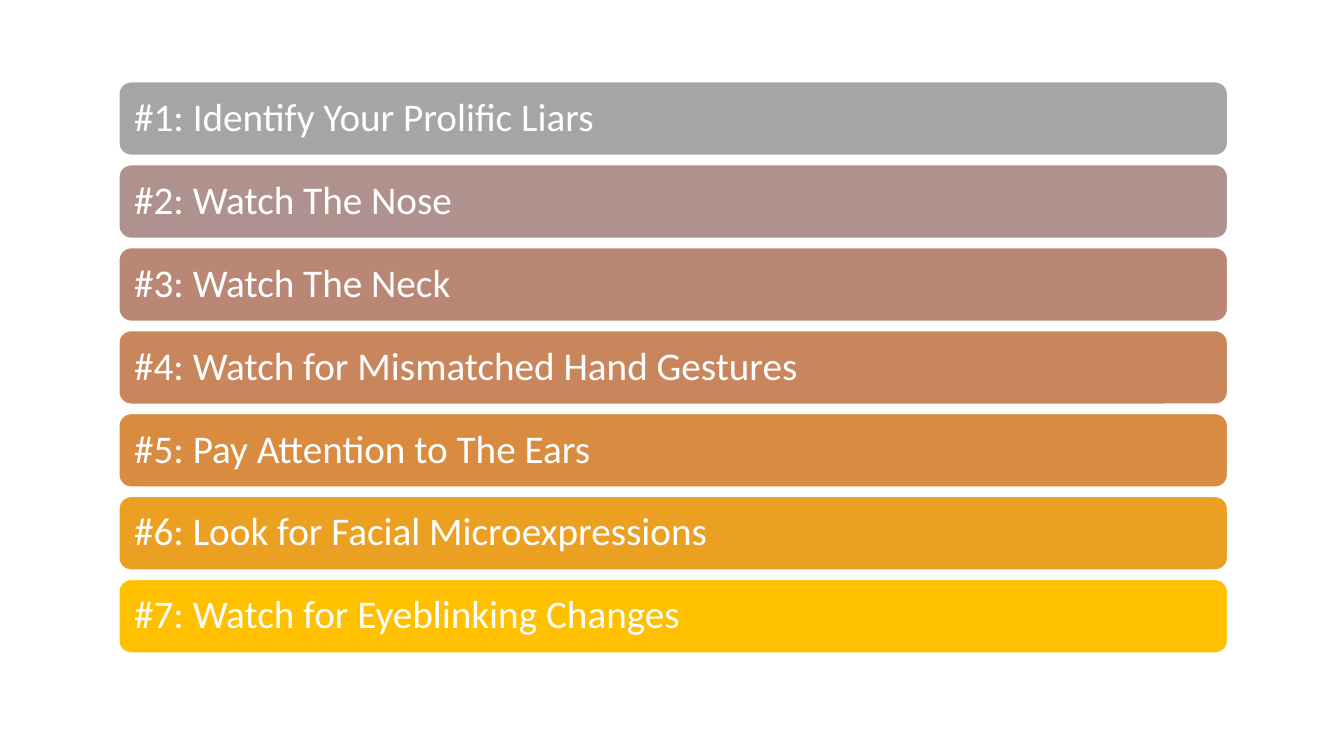
from pptx import Presentation, util as u
from pptx.dml.color import RGBColor
from pptx.enum import shapes, text

Pt = u.Pt
hues = {
    "#1: Identify Your Prolific Liars": "A5A5A5",
    "#2: Watch The Nose": "AF928D",
    "#3: Watch The Neck": "BB8775",
    "#4: Watch for Mismatched Hand Gestures": "C9855C",
    "#5: Pay Attention to The Ears": "D98B3F",
    "#6: Look for Facial Microexpressions": "EBA021",
    "#7: Watch for Eyeblinking Changes": "FFC000",
}
white = RGBColor.from_string("FFFFFF")
left, top, width, height, pitch = 84.9, 58.4, 792, 52.6, 59.25
inset = Pt(8.4)
frame_fmt = {
    "margin_left": inset,
    "margin_right": inset,
    "margin_top": inset,
    "margin_bottom": inset,
    "word_wrap": True,
    "vertical_anchor": text.MSO_ANCHOR.MIDDLE,
}
para_fmt = {"alignment": text.PP_ALIGN.LEFT, "line_spacing": 0.9}
font_fmt = {"name": "Calibri", "size": Pt(28)}

deck = Presentation()
deck.slide_width, deck.slide_height = Pt(960), Pt(540)
slide = deck.slides.add_slide(deck.slide_layouts[6])

for row, (tip, hue) in enumerate(hues.items()):
    bar = slide.shapes.add_shape(
        shapes.MSO_SHAPE.ROUNDED_RECTANGLE,
        Pt(left), Pt(top + row * pitch), Pt(width), Pt(height),
    )
    bar.name = f"Tip {row + 1}"
    bar.shadow.inherit = False
    bar.fill.solid()
    bar.fill.fore_color.rgb = RGBColor.from_string(hue)
    bar.line.color.rgb = white
    bar.line.width = Pt(1)
    frame = bar.text_frame
    frame.text = tip
    para = frame.paragraphs[0]
    font = para.runs[0].font
    font.color.rgb = white
    for part, fmt in ((frame, frame_fmt), (para, para_fmt), (font, font_fmt)):
        for key, val in fmt.items():
            setattr(part, key, val)

deck.save("out.pptx")
